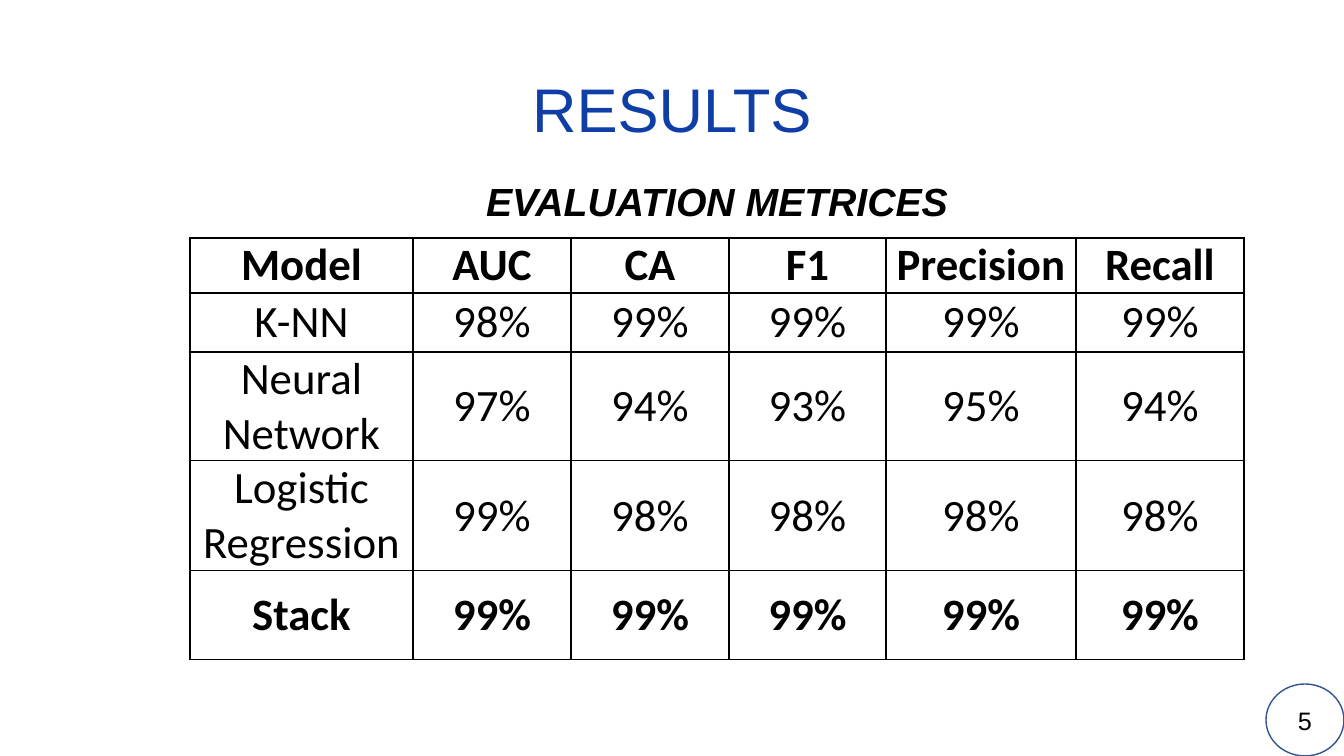
from lxml.etree import SubElement
from pptx import Presentation
from pptx.dml.color import RGBColor
from pptx.enum.shapes import MSO_SHAPE
from pptx.enum.text import MSO_ANCHOR, PP_ALIGN
from pptx.oxml.ns import qn
from pptx.util import Emu, Pt

# Content
TITLE = "RESULTS"
SUBTITLE = "EVALUATION METRICES"
PAGE_NUMBER = "5"
METRICS = [
    ("Model", "AUC", "CA", "F1", "Precision", "Recall"),
    ("K-NN", "98%", "99%", "99%", "99%", "99%"),
    ("Neural Network", "97%", "94%", "93%", "95%", "94%"),
    ("Logistic Regression", "99%", "98%", "98%", "98%", "98%"),
    ("Stack", "99%", "99%", "99%", "99%", "99%"),
]
BOLD_MODELS = ("Model", "Stack")
COLORS = {"title": "103EA7", "ink": "000000", "paper": "FFFFFF", "ring": "325491"}

# Layout in px
SLIDE_WIDTH, SLIDE_HEIGHT = 1344, 756
TABLE_LEFT, TABLE_TOP = 190, 238
COLUMN_WIDTHS = (223, 158, 158, 157, 190, 168)
ROW_HEIGHTS = (55, 59, 109, 110, 89)
TABLE_WIDTH = sum(COLUMN_WIDTHS)
BADGE_WIDTH, BADGE_HEIGHT = 78, 72


def px(length):
    return Emu(round(length * 914400 / 100.8))


def box(left, top, width, height):
    return px(left), px(top), px(width), px(height)


def write(frame, text, size, font="Arial", color="ink", bold=False, italic=False,
          spacing=1.0, anchor=MSO_ANCHOR.MIDDLE):
    frame.word_wrap = True
    frame.vertical_anchor = anchor
    paragraph = frame.paragraphs[0]
    paragraph.alignment = PP_ALIGN.CENTER
    paragraph.line_spacing = spacing
    run = paragraph.add_run()
    run.text = text
    run.font.name = font
    run.font.size = Pt(size)
    run.font.bold = bold
    run.font.italic = italic
    run.font.color.rgb = RGBColor.from_string(COLORS[color])


def add_borders(cell):
    properties = cell._tc.get_or_add_tcPr()
    for position, side in enumerate(("a:lnL", "a:lnR", "a:lnT", "a:lnB")):
        line = SubElement(properties, qn(side), w=str(Pt(1)))
        fill = SubElement(line, qn("a:solidFill"))
        SubElement(fill, qn("a:srgbClr"), val=COLORS["ink"])
        properties.insert(position, line)


presentation = Presentation()
presentation.slide_width, presentation.slide_height = px(SLIDE_WIDTH), px(SLIDE_HEIGHT)
slide = presentation.slides.add_slide(presentation.slide_layouts[5])

# Title and subtitle
title = slide.shapes.title
title.left, title.top, title.width, title.height = box(92, 40, 1160, 146)
write(title.text_frame, TITLE, 44, color="title", spacing=0.9)
subtitle = slide.shapes.add_textbox(*box(TABLE_LEFT, 170, TABLE_WIDTH, 68))
write(subtitle.text_frame, SUBTITLE, 28, bold=True, italic=True, spacing=0.9)

# Metrics table
metrics = slide.shapes.add_table(
    len(METRICS), len(COLUMN_WIDTHS),
    *box(TABLE_LEFT, TABLE_TOP, TABLE_WIDTH, sum(ROW_HEIGHTS))).table
metrics.horz_banding = False
for column, width in zip(metrics.columns, COLUMN_WIDTHS):
    column.width = px(width)
for row, height, values in zip(metrics.rows, ROW_HEIGHTS, METRICS):
    row.height = px(height)
    for cell, value in zip(row.cells, values):
        cell.margin_left = cell.margin_right = px(7)
        cell.margin_top = cell.margin_bottom = 0
        cell.fill.background()
        add_borders(cell)
        cell.vertical_anchor = MSO_ANCHOR.TOP if values is METRICS[0] else MSO_ANCHOR.MIDDLE
        write(cell.text_frame, value, 32, font="Calibri",
              bold=values[0] in BOLD_MODELS, anchor=None)

# Page number badge
badge = slide.shapes.add_shape(
    MSO_SHAPE.OVAL, *box(SLIDE_WIDTH - BADGE_WIDTH, SLIDE_HEIGHT - BADGE_HEIGHT,
                         BADGE_WIDTH, BADGE_HEIGHT))
badge.shadow.inherit = False
badge.fill.solid()
badge.fill.fore_color.rgb = RGBColor.from_string(COLORS["paper"])
badge.line.color.rgb = RGBColor.from_string(COLORS["ring"])
badge.line.width = Pt(1)
write(badge.text_frame, PAGE_NUMBER, 18)

presentation.save("out.pptx")
